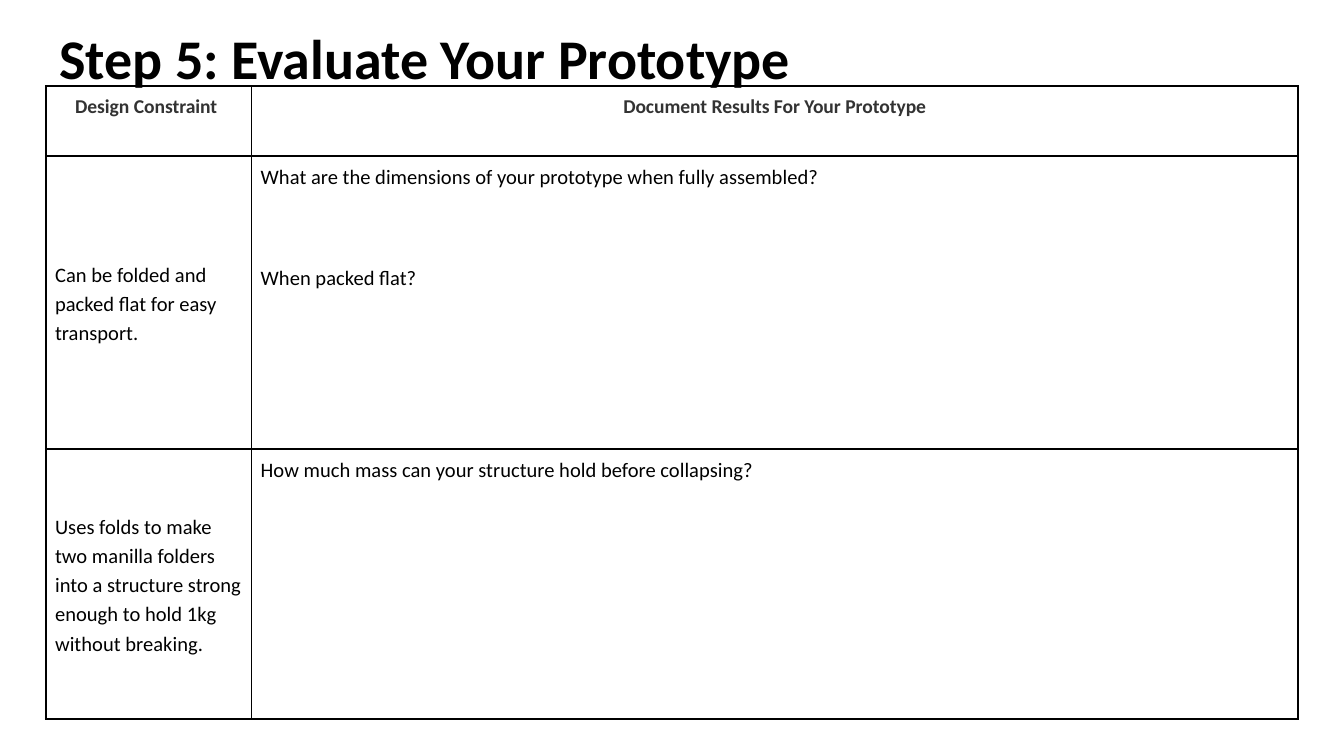
from pptx import Presentation
from pptx.dml.color import RGBColor as Rgb
from pptx.enum.text import MSO_ANCHOR as Anchor, MSO_AUTO_SIZE as Auto, PP_ALIGN as Align
from pptx.oxml import parse_xml as to_xml
from pptx.oxml.ns import nsdecls
from pptx.util import Inches as In, Pt

WIDTH = 10
HEIGHT = WIDTH * 9 / 16
LEFT, TOP = 0.34, 0.64
COLS = [1.53, 7.79]
ROWS = [0.52, 2.18, 2.01]
HEADS = ["Design Constraint ", "Document Results For Your Prototype"]
TESTS = [
    ("Can be folded and packed flat for easy transport.",
     ["What are the dimensions of your prototype when fully assembled?",
      "When packed flat?"]),
    ("Uses folds to make two manilla folders into a structure strong "
     "enough to hold 1kg without breaking.",
     ["How much mass can your structure hold before collapsing?"]),
]


def color(code):
    return Rgb.from_string(code)


def write(frame, lines, size=11, tint="000000", bold=False,
          align=Align.LEFT, pitch=1.0, gap=0):
    for i, line in enumerate(lines):
        para = frame.add_paragraph() if i else frame.paragraphs[0]
        para.alignment = align
        para.line_spacing = pitch
        para.space_before = Pt(gap if i else 0)
        para.space_after = Pt(0)
        run = para.add_run()
        run.text = line
        font = run.font
        font.name, font.size, font.bold = "Calibri", Pt(size), bold
        font.color.rgb = color(tint)


def border(cell, tint="000000", width=1):
    props = cell._tc.get_or_add_tcPr()
    for i, side in enumerate("LRTB"):
        props.insert(i, to_xml(
            f'<a:ln{side} {nsdecls("a")} w="{Pt(width)}"><a:solidFill>'
            f'<a:srgbClr val="{tint}"/></a:solidFill></a:ln{side}>'))


def fill(cell, lines, anchor=Anchor.TOP, **style):
    cell.margin_left = cell.margin_right = In(0.07)
    cell.margin_top = cell.margin_bottom = In(0.07)
    cell.vertical_anchor = anchor
    cell.fill.background()
    border(cell)
    write(cell.text_frame, lines, **style)


def add_title(slide, text):
    title = slide.shapes.title
    title.left, title.top = In(LEFT), In(0)
    title.width, title.height = In(8.98), In(0.42)
    frame = title.text_frame
    frame.auto_size = Auto.NONE
    frame.word_wrap = True
    frame.vertical_anchor = Anchor.TOP
    frame.margin_left = frame.margin_right = In(0.1)
    frame.margin_top = frame.margin_bottom = In(0.1)
    write(frame, [text], size=30, bold=True, pitch=1.15)


def add_grid(slide):
    table = slide.shapes.add_table(
        len(ROWS), len(COLS), In(LEFT), In(TOP),
        In(sum(COLS)), In(sum(ROWS))).table
    table.first_row = table.horz_banding = False
    for col, width in zip(table.columns, COLS):
        col.width = In(width)
    for row, height in zip(table.rows, ROWS):
        row.height = In(height)
    for i, head in enumerate(HEADS):
        fill(table.cell(0, i), [head], size=10.5, tint="333333",
             bold=True, align=Align.CENTER)
    for i, (rule, asks) in enumerate(TESTS, 1):
        fill(table.cell(i, 0), [rule], anchor=Anchor.MIDDLE, pitch=1.15)
        fill(table.cell(i, 1), asks, gap=40.3)


def main():
    deck = Presentation()
    deck.slide_width, deck.slide_height = In(WIDTH), In(HEIGHT)
    slide = deck.slides.add_slide(deck.slide_layouts[5])
    add_title(slide, "Step 5: Evaluate Your Prototype")
    add_grid(slide)
    deck.save("out.pptx")


if __name__ == "__main__":
    main()
